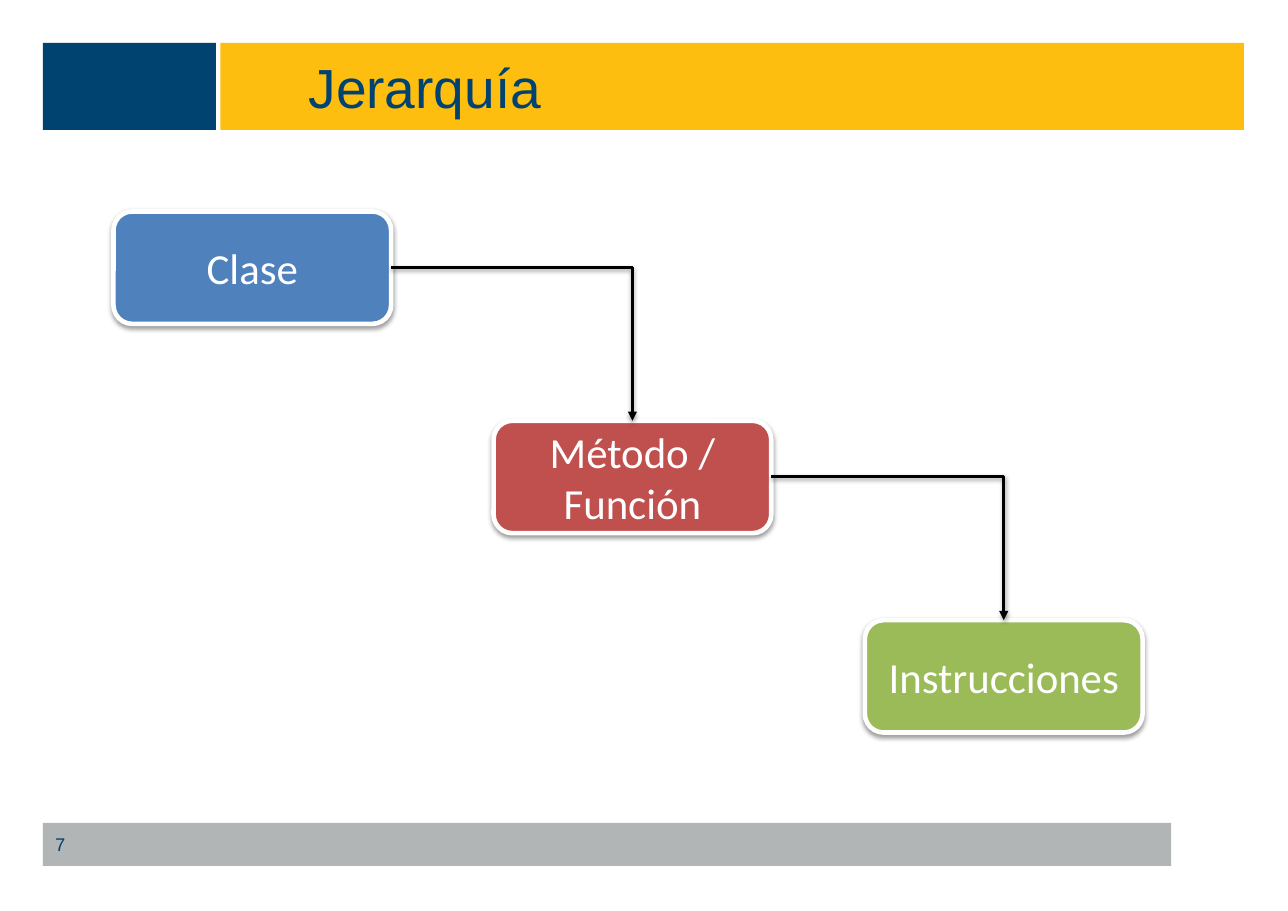
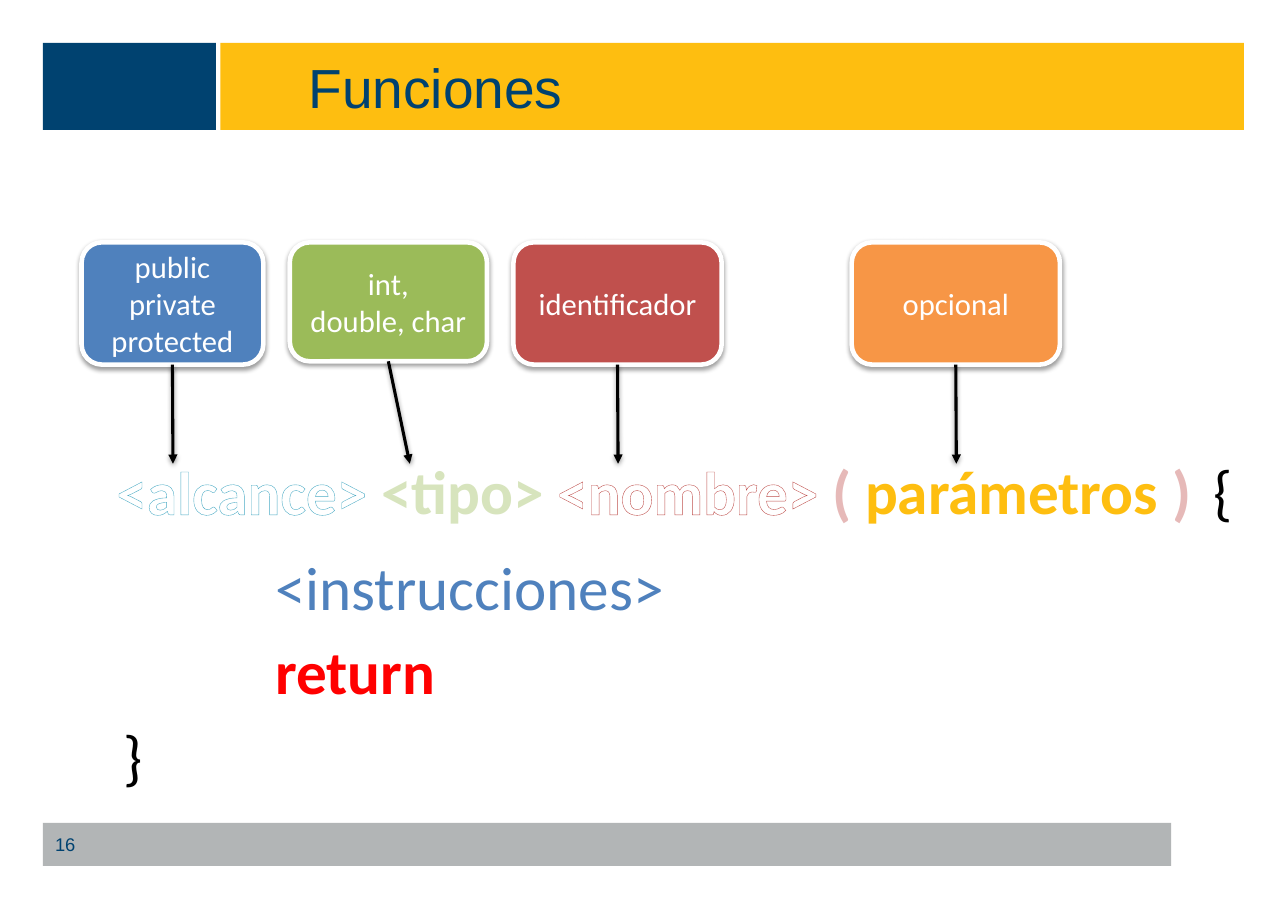
from lxml import etree
from pptx import Presentation
from pptx.dml.color import RGBColor
from pptx.enum import dml, shapes, text
from pptx.oxml import ns
from pptx.util import Inches, Pt

NAVY, GOLD, GREY = "004270", "FEBE10", "B2B5B6"
BLUE, RED, GREEN, ORANGE = "4F81BD", "C0504D", "9BBB59", "F79646"
WHITE, BLACK = "FFFFFF", "000000"
TOP, BOTTOM, RIGHT = 0, 2, 3  # connection sites of a rounded rectangle


def rgb(value):
    return RGBColor.from_string(value)


def add_xml(parent, tag, **attributes):
    return etree.SubElement(parent, ns.qn(tag), attributes)


def add_shadow(shape):
    effects = add_xml(shape._element.spPr, "a:effectLst")
    shadow = add_xml(effects, "a:outerShdw", blurRad="40000", dist="20000",
                     dir="5400000", rotWithShape="0")
    colour = add_xml(shadow, "a:srgbClr", val=BLACK)
    add_xml(colour, "a:alpha", val="38000")


def style(p, size, colour=None, name="Calibri", bold=False):
    p.font.size, p.font.name, p.font.bold = Pt(size), name, bold
    if colour:
        p.font.color.rgb = rgb(colour)


def add_band(s, x, y, w, h, colour):
    band = s.shapes.add_shape(shapes.MSO_SHAPE.RECTANGLE,
                              Inches(x), Inches(y), Inches(w), Inches(h))
    band.shadow.inherit = False
    band.fill.solid()
    band.fill.fore_color.rgb = rgb(colour)
    band.line.fill.background()


def add_text(s, x, y, w, h, content, size, colour=None, name="Calibri",
             bold=False, wrap=False, inset=0.1, anchor=text.MSO_ANCHOR.TOP):
    tf = s.shapes.add_textbox(Inches(x), Inches(y), Inches(w), Inches(h)).text_frame
    tf.word_wrap = wrap
    tf.vertical_anchor = anchor
    tf.margin_left = tf.margin_right = Inches(inset)
    p = tf.paragraphs[0]
    if content:
        p.add_run().text = content
    style(p, size, colour, name, bold)
    return p


def add_node(s, x, y, w, h, lines, size, colour):
    """Rounded box with a white border and a soft shadow."""
    node = s.shapes.add_shape(shapes.MSO_SHAPE.ROUNDED_RECTANGLE,
                              Inches(x), Inches(y), Inches(w), Inches(h))
    node.fill.solid()
    node.fill.fore_color.rgb = rgb(colour)
    node.line.color.rgb = rgb(WHITE)
    node.line.width = Pt(3)
    add_shadow(node)
    tf = node.text_frame
    tf.word_wrap = True
    tf.text = "\n".join(lines)
    for p in tf.paragraphs:
        p.alignment = text.PP_ALIGN.CENTER
        style(p, size, WHITE)
    return node


def add_arrow(s, source, site, x=0, y=0, target=None):
    """Arrow from a node: bent to the top of target, or straight to (x, y)."""
    kind = shapes.MSO_CONNECTOR.ELBOW if target else shapes.MSO_CONNECTOR.STRAIGHT
    arrow = s.shapes.add_connector(kind, 0, 0, Inches(x), Inches(y))
    arrow.begin_connect(source, site)
    if target:
        arrow.end_connect(target, TOP)
        arrow._element.spPr.find(ns.qn("a:prstGeom")).set("prst", "bentConnector2")
    arrow.line.color.rgb = rgb(BLACK)
    arrow.line.width = Pt(2)
    add_xml(arrow.line._get_or_add_ln(), "a:tailEnd", type="triangle")
    add_shadow(arrow)


def add_outline(r, colour, width):
    rPr = r._r.get_or_add_rPr()
    ln = add_xml(rPr, "a:ln", w=str(Pt(width)))
    add_xml(add_xml(ln, "a:solidFill"), "a:srgbClr", val=colour)
    rPr.insert(0, ln)


def add_frame(prs, title, number):
    """New slide with the shared bands, title and page number."""
    s = prs.slides.add_slide(prs.slide_layouts[6])
    add_band(s, 0.39, 7.47, 10.24, 0.39, GREY)
    add_band(s, 0.39, 0.39, 1.57, 0.79, NAVY)
    add_band(s, 2, 0.39, 9.29, 0.79, GOLD)
    shared = dict(colour=NAVY, name="Arial", wrap=True, inset=0.11,
                  anchor=text.MSO_ANCHOR.MIDDLE)
    add_text(s, 2.69, 0.39, 8.6, 0.79, title, 36, **shared)
    add_text(s, 0.39, 7.47, 2.73, 0.39, number, 12, **shared)
    return s


def add_hierarchy(s, x, y):
    steps = [(0, 0, "Clase", BLUE),
             (3.45, 1.9, "Método / Función", RED),
             (6.82, 3.71, "Instrucciones", GREEN)]
    nodes = [add_node(s, x + dx, y + dy, 2.52, 1.02, [label], 28, colour)
             for dx, dy, label, colour in steps]
    for source, target in zip(nodes, nodes[1:]):
        add_arrow(s, source, RIGHT, target=target)


def add_hints(s, x, y):
    """Row of boxes, each pointing down at one part of the declaration."""
    hints = [(0, 1.65, 1.11, 0.83, ["public", "private", "protected"], BLUE),
             (1.89, 1.79, 1.08, 2.98, ["int,", "double, char"], GREEN),
             (3.92, 1.89, 1.11, 4.87, ["identificador"], RED),
             (6.99, 1.89, 1.11, 7.94, ["opcional"], ORANGE)]
    for dx, w, h, tip, lines, colour in hints:
        node = add_node(s, x + dx, y, w, h, lines, 20, colour)
        add_arrow(s, node, BOTTOM, x + tip, y + 2.01)


def add_declaration(s, x, y):
    p = add_text(s, x, y, 10.33, 0.77, "", 40, bold=True, wrap=True)
    parts = [("<alcance> ", WHITE, "4BACC6", 0.8),
             ("<tipo> ", "D7E4BD", "4F6228", 1),
             ("<nombre> ", WHITE, RED, 0.52),
             ("( ", "E6B9B8", RED, 1.75),
             ("parámetros ", GOLD, None, 0),
             (")", "E6B9B8", RED, 1.75)]
    for content, colour, outline, width in parts:
        r = p.add_run()
        r.text = content
        if content == "<tipo> ":
            r.font.fill.patterned()
            r.font.fill.pattern = dml.MSO_PATTERN.NARROW_HORIZONTAL
            r.font.fill.fore_color.rgb = rgb(GREEN)
            r.font.fill.back_color.rgb = rgb(colour)
        else:
            r.font.color.rgb = rgb(colour)
        if outline:
            add_outline(r, outline, width)
    body = [(9.96, 0, 0.38, "{", BLACK, False),
            (1.44, 0.87, 3.76, "<instrucciones>", BLUE, False),
            (1.44, 1.63, 1.67, "return", "FF0000", True),
            (0.06, 2.4, 0.38, "}", BLACK, False)]
    for dx, dy, w, content, colour, bold in body:
        add_text(s, x + dx, y + dy, w, 0.77, content, 40, colour, bold=bold)


def main():
    prs = Presentation()
    prs.slide_width, prs.slide_height = Inches(11.69), Inches(8.27)
    add_hierarchy(add_frame(prs, "Jerarquía", "7"), 1.03, 1.92)
    s = add_frame(prs, "Funciones", "16")
    add_hints(s, 0.74, 2.2)
    add_declaration(s, 0.96, 4.07)
    prs.save("out.pptx")


if __name__ == "__main__":
    main()
